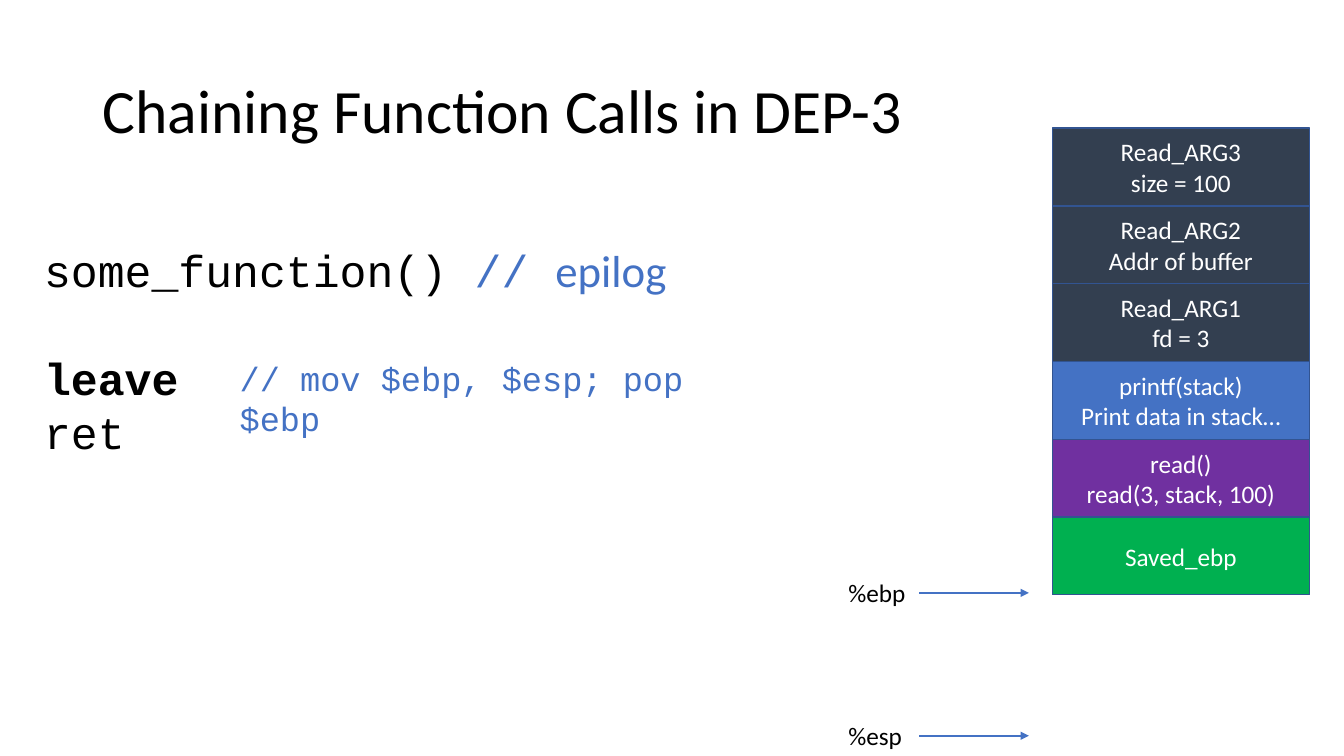
"""Build the slide on chaining function calls under DEP."""
from lxml import etree
from pptx import Presentation
from pptx import util as u
from pptx.dml.color import RGBColor
from pptx.enum import shapes, text
from pptx.oxml.ns import qn

COLOURS = {
    "black": "000000",
    "white": "FFFFFF",
    "blue": "4472C4",
    "border": "325491",
    "slate": "333F50",
    "purple": "7030A0",
    "green": "00B050",
}
STACK = [
    ("Read_ARG3\nsize = 100", "slate"),
    ("Read_ARG2\nAddr of buffer", "slate"),
    ("Read_ARG1\nfd = 3", "slate"),
    ("printf(stack)\nPrint data in stack…", "blue"),
    ("read()\nread(3, stack, 100)", "purple"),
    ("Saved_ebp", "green"),
]
STACK_TOP = 3.23
CELL_HEIGHT = 1.96
REGISTERS = [("%ebp", 14.94), ("%esp", 18.54)]


class SlideBuilder:
    """Hold the fonts and the slide, and draw each kind of element."""

    body_font = "Calibri"
    code_font = "Courier New"

    def __init__(self, slide):
        self.slide = slide

    def colour(self, name):
        return RGBColor.from_string(COLOURS[name])

    def format_run(self, run, size, colour="black", font=None, bold=False):
        run.font.name = font or self.body_font
        run.font.size = u.Pt(size)
        run.font.bold = bold
        run.font.color.rgb = self.colour(colour)

    def text_box(self, content, left, top, width, height, size, colour="black",
                 font=None, wrap=True, anchor=text.MSO_ANCHOR.TOP):
        box = self.slide.shapes.add_textbox(
            u.Cm(left), u.Cm(top), u.Cm(width), u.Cm(height))
        frame = box.text_frame
        frame.word_wrap = wrap
        frame.vertical_anchor = anchor
        frame.text = content
        for paragraph in frame.paragraphs:
            for run in paragraph.runs:
                self.format_run(run, size, colour, font)
        return frame

    def title(self, content):
        frame = self.text_box(content, 2.34, 1.02, 29.21, 3.68, 44,
                              anchor=text.MSO_ANCHOR.MIDDLE)
        frame.paragraphs[0].line_spacing = 0.9

    def stack_cell(self, content, fill, top):
        cell = self.slide.shapes.add_shape(
            shapes.MSO_SHAPE.RECTANGLE,
            u.Cm(26.52), u.Cm(top), u.Cm(6.48), u.Cm(CELL_HEIGHT))
        cell.shadow.inherit = False
        cell.fill.solid()
        cell.fill.fore_color.rgb = self.colour(fill)
        cell.line.color.rgb = self.colour("border")
        cell.line.width = u.Pt(1)
        frame = cell.text_frame
        frame.vertical_anchor = text.MSO_ANCHOR.MIDDLE
        frame.text = content
        for paragraph in frame.paragraphs:
            paragraph.alignment = text.PP_ALIGN.CENTER
            for run in paragraph.runs:
                self.format_run(run, 18, "white")

    def arrow(self, left, right, y):
        arrow = self.slide.shapes.add_connector(
            shapes.MSO_CONNECTOR.STRAIGHT,
            u.Cm(left), u.Cm(y), u.Cm(right), u.Cm(y))
        arrow.line.color.rgb = self.colour("blue")
        arrow.line.width = u.Pt(1.5)
        etree.SubElement(arrow.line._get_or_add_ln(), qn("a:tailEnd"), type="triangle")
        etree.SubElement(arrow._element.spPr, qn("a:effectLst"))

    def register(self, name, y):
        self.text_box(name, 21.13, y - 0.51, 1.98, 1.02, 18, wrap=False)
        self.arrow(23.16, 25.93, y)

    def epilog_code(self):
        frame = self.text_box("some_function() \nleave\nret", 0.86, 5.99,
                              16.61, 5.74, 32, font=self.code_font)
        call, leave, _ = frame.paragraphs
        for content, font in (("// ", self.code_font), ("epilog", self.body_font)):
            run = call.add_run()
            run.text = content
            self.format_run(run, 32, "blue", font)
        leave.space_before = u.Pt(39)
        leave.runs[0].font.bold = True
        self.text_box("// mov $ebp, $esp; pop $ebp", 5.79, 8.89, 13.26, 1.27,
                      24, "blue", self.code_font)


def main():
    presentation = Presentation()
    presentation.slide_width = u.Cm(33.87)
    presentation.slide_height = u.Cm(19.05)
    slide = presentation.slides.add_slide(presentation.slide_layouts[6])
    builder = SlideBuilder(slide)
    builder.title("Chaining Function Calls in DEP-3")
    for row, (content, fill) in enumerate(STACK):
        builder.stack_cell(content, fill, STACK_TOP + row * CELL_HEIGHT)
    builder.epilog_code()
    for name, y in REGISTERS:
        builder.register(name, y)
    presentation.save("out.pptx")


if __name__ == "__main__":
    main()
